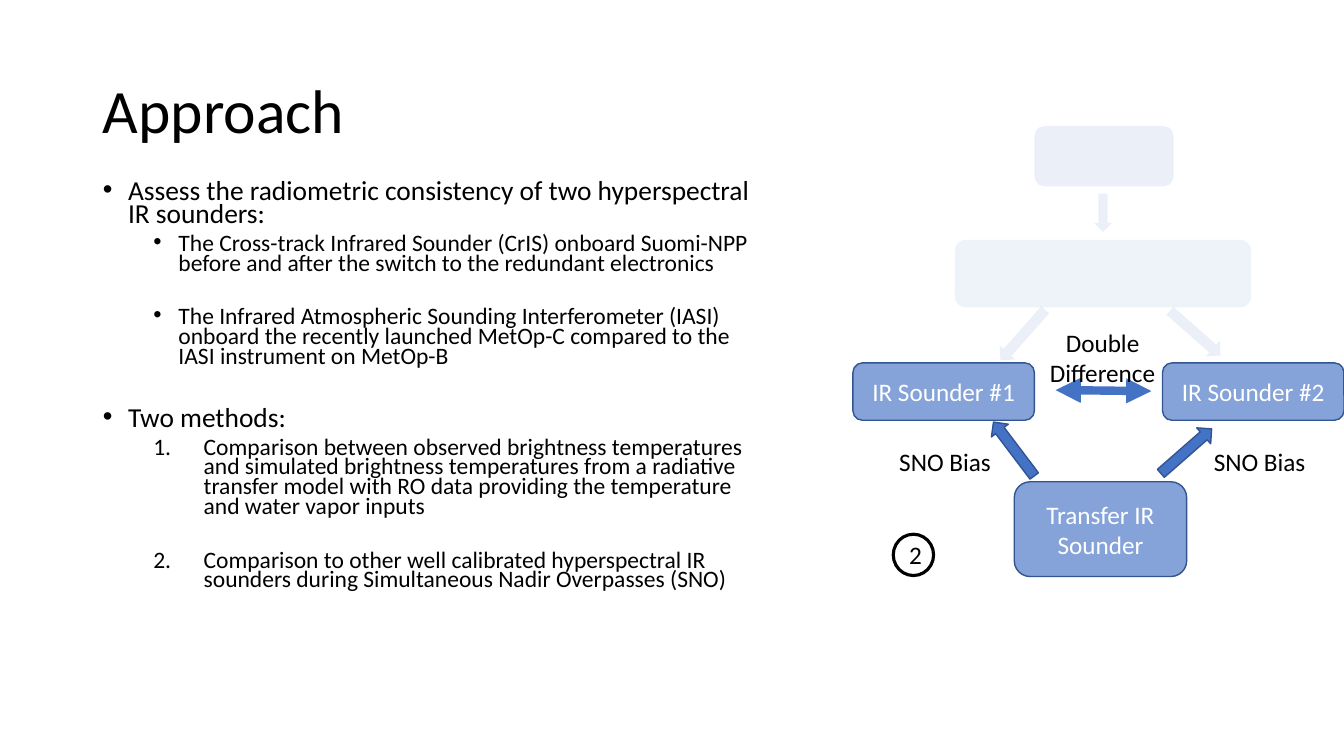
"""Build the Approach slide with its sounder comparison diagram."""
from dataclasses import dataclass
from typing import NamedTuple

from lxml.etree import SubElement
from pptx import Presentation
from pptx.dml.color import RGBColor
from pptx.enum.shapes import MSO_CONNECTOR, MSO_SHAPE
from pptx.enum.text import MSO_ANCHOR, MSO_AUTO_SIZE, PP_ALIGN
from pptx.oxml.ns import qn
from pptx.shapes.autoshape import Shape
from pptx.slide import Slide
from pptx.text.text import TextFrame, _Paragraph
from pptx.util import Emu, Pt

EMU_PER_PX = 9144


@dataclass(frozen=True)
class Theme:
    font: str = "Calibri"
    bullet_font: str = "Arial"
    ink: str = "000000"
    paper: str = "FFFFFF"
    accent: str = "4472C4"
    outline: str = "325491"
    title: float = 44
    topic: float = 19.6
    detail: float = 16.8
    label: float = 18


class Rect(NamedTuple):
    left: int
    top: int
    width: int
    height: int


class Point(NamedTuple):
    x: int
    y: int


class Item(NamedTuple):
    text: str
    size: float
    level: int
    margin: int
    hanging: int
    before: float
    numbered: bool = False


class Box(NamedTuple):
    rect: Rect
    opacity: int
    outlined: bool
    text: str = ""


class Arrow(NamedTuple):
    rect: Rect
    rotation: float
    opacity: int
    outlined: bool


class Label(NamedTuple):
    text: str
    rect: Rect
    align: PP_ALIGN


THEME = Theme()

TITLE_RECT = Rect(92, 40, 1150, 145)
BODY_RECT = Rect(92, 176, 671, 500)
ITEMS = [
    Item("Assess the radiometric consistency of two hyperspectral IR sounders:",
         THEME.topic, 0, 25, 25, 10),
    Item("The Cross-track Infrared Sounder (CrIS) onboard Suomi-NPP before and after "
         "the switch to the redundant electronics", THEME.detail, 1, 75, 25, 5),
    Item("The Infrared Atmospheric Sounding Interferometer (IASI) onboard the recently "
         "launched MetOp-C compared to the IASI instrument on MetOp-B",
         THEME.detail, 1, 75, 25, 24.3),
    Item("Two methods:", THEME.topic, 0, 25, 25, 29.3),
    Item("Comparison between observed brightness temperatures and simulated brightness "
         "temperatures from a radiative transfer model with RO data providing the "
         "temperature and water vapor inputs", THEME.detail, 1, 100, 50, 5, True),
    Item("Comparison to other well calibrated hyperspectral IR sounders during "
         "Simultaneous Nadir Overpasses (SNO)", THEME.detail, 1, 100, 50, 24.3, True),
]
BOXES = [
    Box(Rect(1026, 125, 138, 60), 10, False),
    Box(Rect(947, 238, 294, 67), 9, False),
    Box(Rect(846, 360, 180, 57), 65, True, "IR Sounder #1"),
    Box(Rect(1153, 360, 180, 57), 65, True, "IR Sounder #2"),
    Box(Rect(1006, 478, 171, 94), 65, True, "Transfer IR Sounder"),
]
ARROWS = [
    Arrow(Rect(1085, 192, 18, 38), 0, 10, False),
    Arrow(Rect(1175, 297, 21, 67), 311.4, 10, False),
    Arrow(Rect(1004, 299, 21, 67), 41.5, 10, False),
    Arrow(Rect(995, 412, 21, 67), 142.9, 100, True),
    Arrow(Rect(1166, 414, 21, 67), 228.8, 100, True),
]
LABELS = [
    Label("SNO Bias", Rect(882, 438, 121, 40), PP_ALIGN.LEFT),
    Label("Double Difference", Rect(1014, 320, 159, 71), PP_ALIGN.CENTER),
    Label("SNO Bias", Rect(1194, 438, 119, 40), PP_ALIGN.LEFT),
]
DIFFERENCE_ENDS = (Point(1047, 387), Point(1142, 388))
METHOD_BADGE = Rect(886, 530, 40, 41)


def px(length: int) -> Emu:
    """Turn pixels into EMU."""
    return Emu(length * EMU_PER_PX)


def place(rect: Rect) -> list[Emu]:
    """Give the four EMU lengths of a rectangle."""
    return [px(length) for length in rect]


def move(placeholder: Shape, rect: Rect) -> None:
    """Put a placeholder on a rectangle."""
    placeholder.left, placeholder.top, placeholder.width, placeholder.height = place(rect)


def add_text(paragraph: _Paragraph, text: str, size: float, color: str) -> None:
    """Append one formatted run."""
    run = paragraph.add_run()
    run.text = text
    run.font.name = THEME.font
    run.font.size = Pt(size)
    run.font.color.rgb = RGBColor.from_string(color)


def write_centred(frame: TextFrame, text: str, color: str) -> None:
    """Write a label in the middle of a shape."""
    frame.word_wrap = True
    frame.vertical_anchor = MSO_ANCHOR.MIDDLE
    frame.paragraphs[0].alignment = PP_ALIGN.CENTER
    add_text(frame.paragraphs[0], text, THEME.label, color)


def add_item(paragraph: _Paragraph, item: Item) -> None:
    """Write one bulleted or numbered item."""
    paragraph.level = item.level
    paragraph.line_spacing = 0.7
    paragraph.space_before = Pt(item.before)
    paragraph.space_after = Pt(0)
    properties = paragraph._p.get_or_add_pPr()
    properties.set("marL", str(px(item.margin)))
    properties.set("indent", str(-px(item.hanging)))
    bullet_font = THEME.font if item.numbered else THEME.bullet_font
    SubElement(properties, qn("a:buFont"), typeface=bullet_font)
    if item.numbered:
        SubElement(properties, qn("a:buAutoNum"), type="arabicPeriod")
    else:
        SubElement(properties, qn("a:buChar"), char="•")
    add_text(paragraph, item.text, item.size, THEME.ink)


def add_filled(slide: Slide, preset: MSO_SHAPE, part: Box | Arrow) -> Shape:
    """Draw an accent shape with its opacity and outline."""
    shape = slide.shapes.add_shape(preset, *place(part.rect))
    shape.shadow.inherit = False
    shape.fill.solid()
    shape.fill.fore_color.rgb = RGBColor.from_string(THEME.accent)
    if part.opacity < 100:
        color = shape.fill._xPr.find(qn("a:solidFill"))[0]
        SubElement(color, qn("a:alpha"), val=str(part.opacity * 1000))
    if part.outlined:
        shape.line.color.rgb = RGBColor.from_string(THEME.outline)
        shape.line.width = Pt(1)
    else:
        shape.line.fill.background()
    return shape


def add_label(slide: Slide, label: Label) -> None:
    """Draw a free-standing label."""
    frame = slide.shapes.add_textbox(*place(label.rect)).text_frame
    frame.word_wrap = True
    frame.auto_size = MSO_AUTO_SIZE.SHAPE_TO_FIT_TEXT
    frame.paragraphs[0].alignment = label.align
    add_text(frame.paragraphs[0], label.text, THEME.label, THEME.ink)


def add_difference_line(slide: Slide, start: Point, end: Point) -> None:
    """Draw the double-headed line between the sounders."""
    difference = slide.shapes.add_connector(
        MSO_CONNECTOR.STRAIGHT, px(start.x), px(start.y), px(end.x), px(end.y))
    difference.line.color.rgb = RGBColor.from_string(THEME.accent)
    difference.line.width = Pt(6)
    outline = difference.line._get_or_add_ln()
    for tip in ("a:headEnd", "a:tailEnd"):
        SubElement(outline, qn(tip), type="triangle")
    SubElement(difference._element.spPr, qn("a:effectLst"))


def add_badge(slide: Slide, rect: Rect, text: str) -> None:
    """Draw the circled method number."""
    badge = slide.shapes.add_shape(MSO_SHAPE.OVAL, *place(rect))
    badge.shadow.inherit = False
    badge.fill.background()
    badge.line.color.rgb = RGBColor.from_string(THEME.ink)
    badge.line.width = Pt(2.25)
    write_centred(badge.text_frame, text, THEME.ink)


def add_outline(slide: Slide) -> None:
    """Fill the title and body placeholders."""
    title, body = slide.shapes.title, slide.placeholders[1]
    move(title, TITLE_RECT)
    move(body, BODY_RECT)
    for frame in (title.text_frame, body.text_frame):
        frame.auto_size = MSO_AUTO_SIZE.NONE
    title.text_frame.vertical_anchor = MSO_ANCHOR.MIDDLE
    heading = title.text_frame.paragraphs[0]
    heading.alignment = PP_ALIGN.LEFT
    heading.line_spacing = 0.9
    add_text(heading, "Approach", THEME.title, THEME.ink)
    for index, item in enumerate(ITEMS):
        frame = body.text_frame
        add_item(frame.add_paragraph() if index else frame.paragraphs[0], item)


def main() -> None:
    """Build and save the presentation."""
    presentation = Presentation()
    presentation.slide_width, presentation.slide_height = px(1333), px(750)
    slide = presentation.slides.add_slide(presentation.slide_layouts[1])
    add_outline(slide)
    for box in BOXES:
        shape = add_filled(slide, MSO_SHAPE.ROUNDED_RECTANGLE, box)
        if box.text:
            write_centred(shape.text_frame, box.text, THEME.paper)
    for arrow in ARROWS:
        add_filled(slide, MSO_SHAPE.DOWN_ARROW, arrow).rotation = arrow.rotation
    add_difference_line(slide, *DIFFERENCE_ENDS)
    for label in LABELS:
        add_label(slide, label)
    add_badge(slide, METHOD_BADGE, "2")
    presentation.save("out.pptx")


if __name__ == "__main__":
    main()
